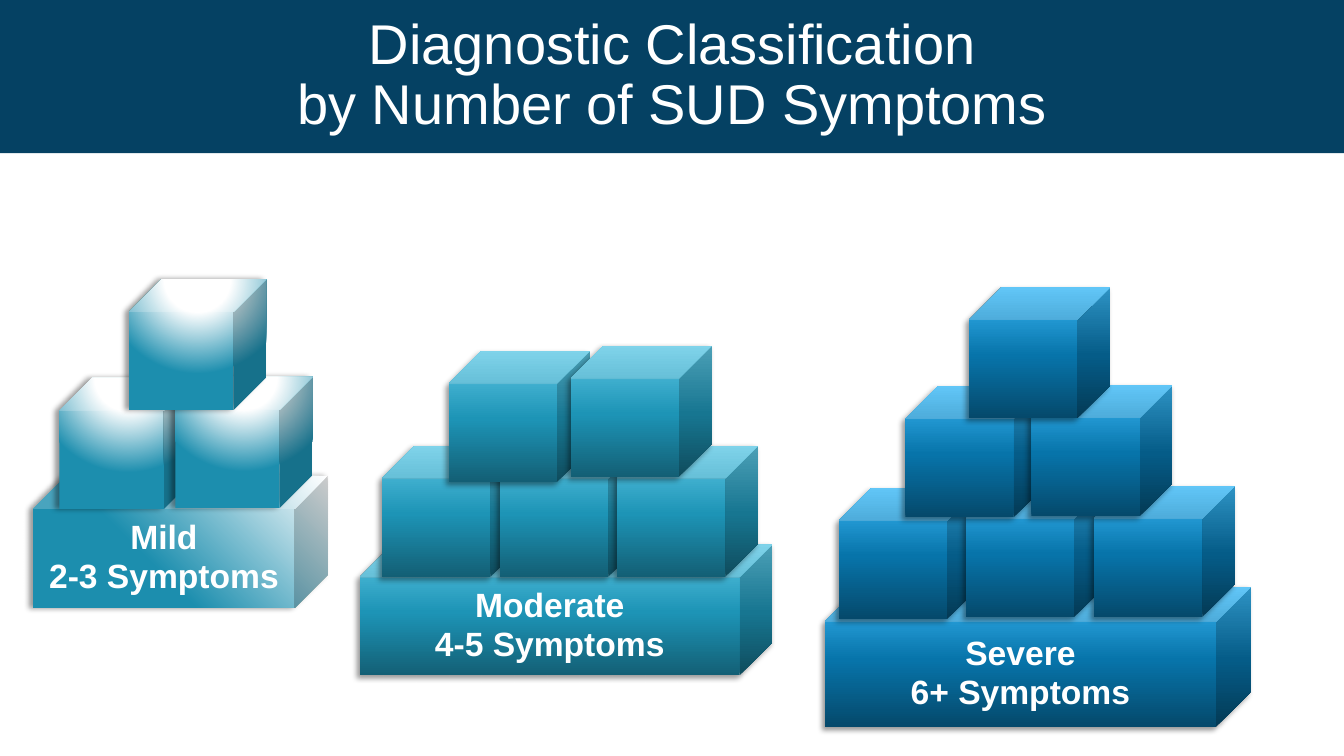
from pptx import Presentation
from pptx import util as u
from pptx.dml.color import RGBColor
from pptx.enum import shapes, text
from pptx.oxml import parse_xml
from pptx.oxml.ns import nsdecls


def style_text(para, size, bold):
    para.alignment = text.PP_ALIGN.CENTER
    para.line_spacing = 0.9
    for span in para.runs:
        span.font.name = "Arial"
        span.font.size = u.Pt(size)
        span.font.bold = bold
        span.font.color.rgb = RGBColor.from_string("FFFFFF")


def add_cube(left, top, width, height, stops, shade, shadow_angle):
    cube = page.shapes.add_shape(
        shapes.MSO_SHAPE.CUBE, u.Inches(left), u.Inches(top), u.Inches(width), u.Inches(height))
    cube.line.fill.background()
    cube.shadow.inherit = False
    colours = "".join(
        f'<a:gs pos="{place * 1000}"><a:srgbClr val="{colour}"/></a:gs>' for place, colour in stops)
    properties = cube._element.spPr
    properties.prstGeom.addnext(parse_xml(
        f'<a:gradFill {nsdecls("a")} rotWithShape="1"><a:gsLst>{colours}</a:gsLst>{shade}</a:gradFill>'))
    properties.find(".//{*}effectLst").append(parse_xml(
        f'<a:outerShdw {nsdecls("a")} blurRad="{u.Pt(4)}" dist="{u.Pt(3)}" '
        f'dir="{shadow_angle * 60000}" algn="ctr" rotWithShape="0">'
        '<a:srgbClr val="000000"><a:alpha val="40000"/></a:srgbClr></a:outerShdw>'))
    return cube


deck = Presentation()
deck.slide_width = u.Inches(13.33)
deck.slide_height = u.Inches(7.5)
page = deck.slides.add_slide(deck.slide_layouts[5])

title = page.shapes.title
title.left, title.top = u.Inches(0), u.Inches(0)
title.width, title.height = u.Inches(13.33), u.Inches(1.52)
title.fill.solid()
title.fill.fore_color.rgb = RGBColor.from_string("054163")
title.text_frame.text = "Diagnostic Classification\vby Number of SUD Symptoms"
title.text_frame.auto_size = text.MSO_AUTO_SIZE.NONE
title.text_frame.vertical_anchor = text.MSO_ANCHOR.MIDDLE
style_text(title.text_frame.paragraphs[0], 40, False)

upward = '<a:lin ang="16200000" scaled="0"/>'
diagonal = '<a:lin ang="8100000" scaled="0"/>'
glow = '<a:path path="circle"><a:fillToRect l="50000" t="-80000" r="50000" b="180000"/></a:path>'
white_base = [(0, "FFFFFF"), (62, "1C8EAE")]
white_top = [(0, "FFFFFF"), (35, "FFFFFF"), (100, "1C8EAE")]
teal = [(0, "135F75"), (48, "1D94B6"), (100, "60C8E5")]
blue = [(0, "05496B"), (48, "0774AA"), (100, "3AB8F6")]

piles = [
    ("Mild\n2-3 Symptoms", (0.33, 4.72, 2.92, 1.31), (white_base, diagonal, 180),
     1.36, (white_top, glow, 180),
     [(0.59, 3.75), (1.74, 3.74), (1.28, 2.77)]),
    ("Moderate\n4-5 Symptoms", (3.57, 5.4, 4.09, 1.3), (teal, upward, 135),
     1.4, (teal, upward, 135),
     [(3.79, 4.42), (4.96, 4.42), (4.45, 3.48), (6.12, 4.42), (5.66, 3.43)]),
    ("Severe\n6+ Symptoms", (8.18, 5.82, 4.23, 1.39), (blue, upward, 135),
     1.4, (blue, upward, 135),
     [(8.32, 4.84), (9.58, 4.82), (10.85, 4.82), (8.98, 3.83), (10.23, 3.82), (9.61, 2.85)]),
]

for label, base_place, base_look, block_width, block_look, blocks in piles:
    base = add_cube(*base_place, *base_look)
    frame = base.text_frame
    frame.text = label
    frame.word_wrap = True
    frame.vertical_anchor = text.MSO_ANCHOR.MIDDLE
    for para in frame.paragraphs:
        style_text(para, 24, True)
    frame.paragraphs[1].space_before = u.Pt(2)
    for left, top in blocks:
        add_cube(left, top, block_width, 1.3, *block_look)

deck.save("out.pptx")
